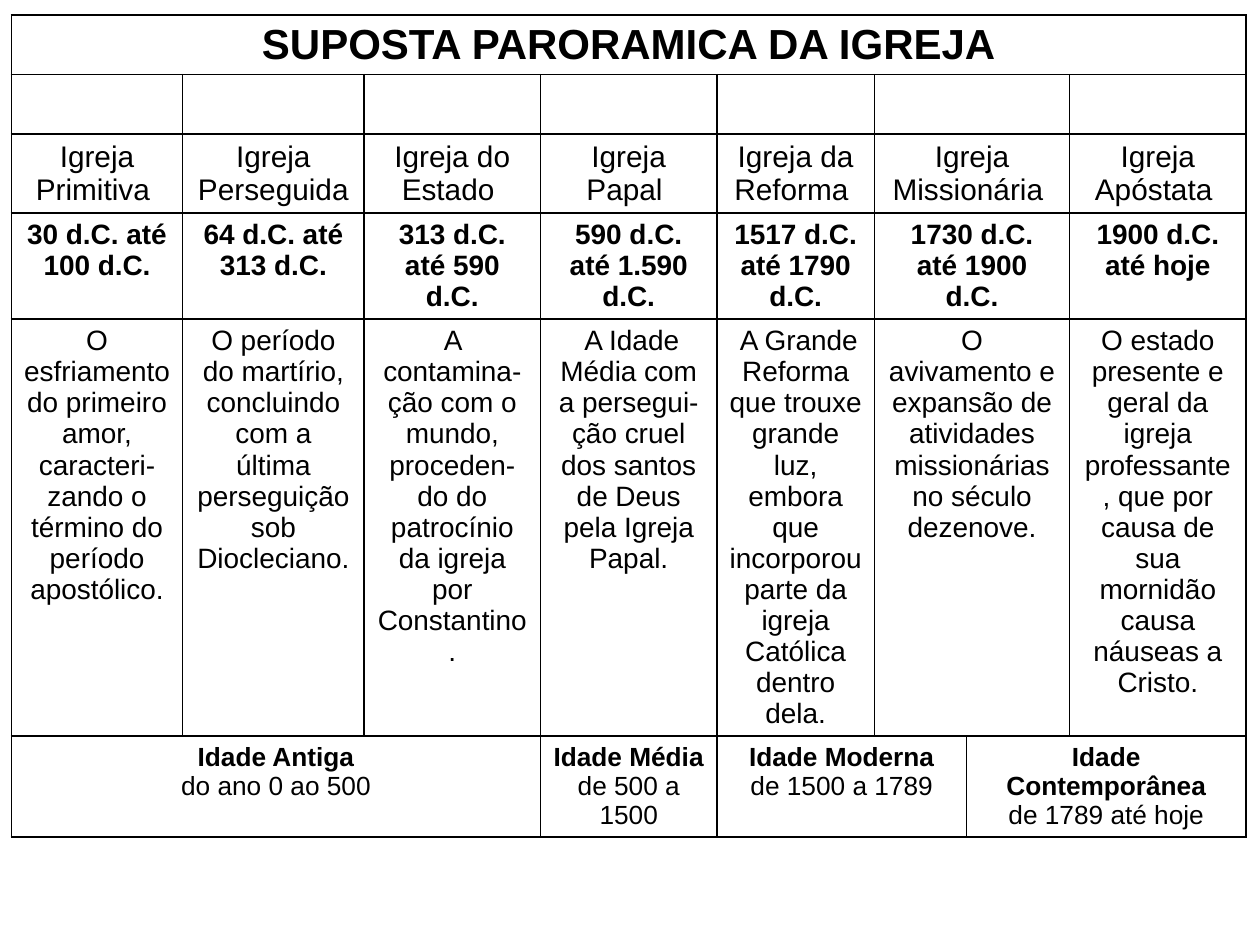
from lxml import etree
from pptx import Presentation
from pptx.dml.color import RGBColor
from pptx.enum.text import PP_ALIGN
from pptx.oxml.ns import qn
from pptx.util import Inches, Pt

CENTER = PP_ALIGN.CENTER
BLANK_LAYOUT = 6
COLORS = {"ink": "000000", "paper": "FFFFFF"}
FORMATS = {
    "title": {"size": Pt(24), "bold": True},
    "church": {"size": Pt(17), "bold": False},
    "dates": {"size": Pt(16), "bold": True},
    "summary": {"size": Pt(16), "bold": False},
    "age": {"size": Pt(15), "bold": True},
    "years": {"size": Pt(15), "bold": False},
}

COLUMN_WIDTHS = [1.36, 1.44, 1.4, 1.4, 1.25, 0.73, 0.82, 1.4]
ROW_HEIGHTS = [0.47, 0.47, 0.63, 0.84, 3.31, 0.8]
PERIOD_SPANS = [1, 1, 1, 1, 1, 2, 1]
AGE_SPANS = [3, 1, 2, 2]

PERIODS = [
    ("Igreja Primitiva ", "30 d.C. até 100 d.C.",
     "O esfriamento do primeiro amor, caracteri-zando o término do período apostólico."),
    ("Igreja Perseguida ", "64 d.C. até 313 d.C.",
     "O período do martírio, concluindo com a última perseguição sob Diocleciano."),
    ("Igreja do Estado ", "313 d.C. até 590 d.C.",
     "A contamina-ção com o mundo, proceden-do do patrocínio da igreja por Constantino."),
    ("Igreja Papal ", "590 d.C. até 1.590 d.C.",
     " A Idade Média com a persegui-ção cruel dos santos de Deus pela Igreja Papal."),
    ("Igreja da Reforma ", "1517 d.C. até 1790 d.C.",
     " A Grande Reforma que trouxe grande luz, embora que incorporou parte da igreja "
     "Católica dentro dela."),
    ("Igreja Missionária ", "1730 d.C. até 1900 d.C.",
     "O avivamento e expansão de atividades missionárias no século dezenove."),
    ("Igreja Apóstata ", "1900 d.C. até hoje",
     "O estado presente e geral da igreja professante, que por causa de sua mornidão "
     "causa náuseas a Cristo."),
]
AGES = [
    ("Idade Antiga", "do ano 0 ao 500"),
    ("Idade Média", "de 500 a 1500"),
    ("Idade Moderna", "de 1500 a 1789"),
    ("Idade Contemporânea", "de 1789 até hoje"),
]


class SlideBuilder:
    font_name = "Arial"
    border_width = Pt(1)

    def __init__(self, slide):
        self.slide = slide

    def table(self, left, top, widths, heights):
        frame = self.slide.shapes.add_table(
            len(heights), len(widths), Inches(left), Inches(top),
            Inches(sum(widths)), Inches(sum(heights)))
        grid = frame.table
        grid.first_row = False
        grid.horz_banding = False
        for column, width in zip(grid.columns, widths):
            column.width = Inches(width)
        for row, height in zip(grid.rows, heights):
            row.height = Inches(height)
            for cell in row.cells:
                self.cell_style(cell)
        return grid

    def cell_style(self, cell):
        properties = cell._tc.get_or_add_tcPr()
        for side in ("a:lnL", "a:lnR", "a:lnT", "a:lnB"):
            border = etree.SubElement(properties, qn(side), w=str(self.border_width))
            fill = etree.SubElement(border, qn("a:solidFill"))
            etree.SubElement(fill, qn("a:srgbClr"), val=COLORS["ink"])
        cell.fill.solid()
        cell.fill.fore_color.rgb = RGBColor.from_string(COLORS["paper"])

    def cell_text(self, cell, lines):
        frame = cell.text_frame
        for index, (text, style) in enumerate(lines):
            paragraph = frame.add_paragraph() if index else frame.paragraphs[0]
            paragraph.alignment = CENTER
            run = paragraph.add_run()
            run.text = text
            run.font.name = self.font_name
            run.font.color.rgb = RGBColor.from_string(COLORS["ink"])
            for attribute, value in FORMATS[style].items():
                setattr(run.font, attribute, value)

    def table_row(self, grid, row, spans, contents):
        column = 0
        for span, lines in zip(spans, contents):
            cell = grid.cell(row, column)
            if span > 1:
                cell.merge(grid.cell(row, column + span - 1))
            self.cell_text(cell, lines)
            column += span


def main():
    presentation = Presentation()
    presentation.slide_width = Inches(10)
    presentation.slide_height = Inches(7.5)
    layout = presentation.slide_layouts[BLANK_LAYOUT]
    builder = SlideBuilder(presentation.slides.add_slide(layout))

    history = builder.table(0.09, 0.12, COLUMN_WIDTHS, ROW_HEIGHTS)
    builder.table_row(history, 0, [len(COLUMN_WIDTHS)],
                      [[("SUPOSTA PARORAMICA DA IGREJA", "title")]])
    builder.table_row(history, 1, PERIOD_SPANS, [[] for _ in PERIODS])
    for offset, style in enumerate(("church", "dates", "summary")):
        builder.table_row(history, 2 + offset, PERIOD_SPANS,
                          [[(period[offset], style)] for period in PERIODS])
    builder.table_row(history, 5, AGE_SPANS,
                      [[(age, "age"), (years, "years")] for age, years in AGES])

    presentation.save("out.pptx")


if __name__ == "__main__":
    main()
